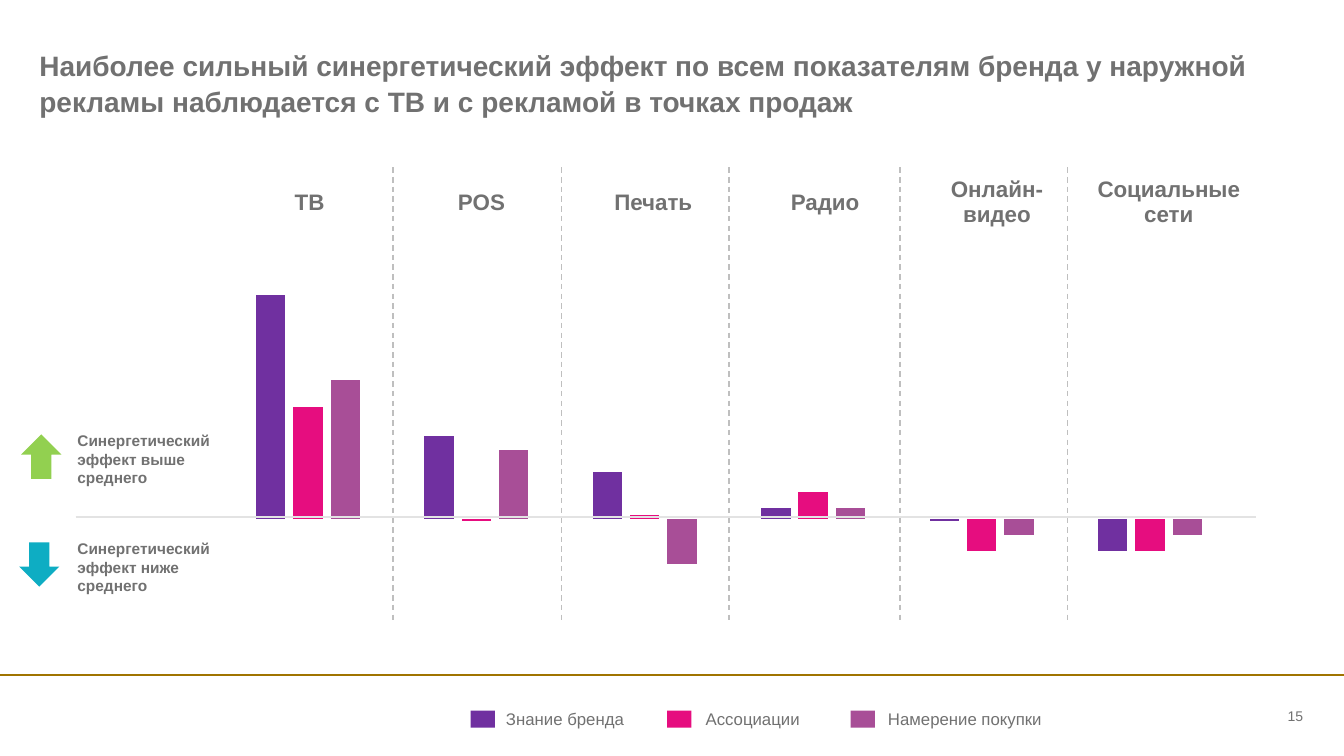
import pptx
import pptx.chart.data
import pptx.dml.color
import pptx.enum.chart
import pptx.enum.dml
import pptx.enum.shapes
import pptx.enum.text
import pptx.oxml
import pptx.oxml.ns
import pptx.util

Pt = pptx.util.Pt
SHAPE = pptx.enum.shapes.MSO_SHAPE
ALIGN = pptx.enum.text.PP_ALIGN
ANCHOR = pptx.enum.text.MSO_ANCHOR

FONT = "Arial"
GREY = "717171"
NO_GRID_STYLE = "{2D5ABB26-0587-4C30-8999-92F81FD0307C}"
TITLE = ("Наиболее сильный синергетический эффект по всем показателям бренда "
         "у наружной рекламы наблюдается с ТВ и с рекламой в точках продаж")
MEDIA = ["ТВ", "POS", "Печать", "Радио", "Онлайн-\nвидео", "Социальные сети"]
DIVIDERS = [280.8, 401, 520.6, 643, 762.5]
SERIES = [
    ("Знание бренда", "7030A0", [100, 37, 21, 5, -1, -14], 336.2, 361.4),
    ("Ассоциации", "E60D7F", [50, -1, 2, 12, -14, -14], 476.6, 504),
    ("Намерение покупки", "A84E97", [62, 31, -20, 5, -7, -7], 607.7, 634.3),
]


def color(value):
    return pptx.dml.color.RGBColor.from_string(value)


def set_text(tf, text, size=12, bold=False, align=ALIGN.LEFT, spacing=None):
    tf.word_wrap = True
    for i, line in enumerate(text.split("\n")):
        p = tf.add_paragraph() if i else tf.paragraphs[0]
        p.alignment = align
        p.space_before = Pt(0)
        p.line_spacing = spacing
        r = p.add_run()
        r.text = line
        r.font.name = FONT
        r.font.size = Pt(size)
        r.font.bold = bold
        r.font.color.rgb = color(GREY)


def set_insets(box, x=0, y=0):
    box.margin_left = box.margin_right = Pt(x)
    box.margin_top = box.margin_bottom = Pt(y)


def add_title(s):
    sp = s.shapes.title
    sp.left, sp.top, sp.width, sp.height = Pt(28.1), Pt(33.8), Pt(902.9), Pt(31.7)
    tf = sp.text_frame
    tf.auto_size = pptx.enum.text.MSO_AUTO_SIZE.NONE
    tf.vertical_anchor = ANCHOR.TOP
    set_insets(tf)
    set_text(tf, TITLE, size=20, bold=True, spacing=1.05)


def add_text(s, text, x, y, w, h, inset=(0, 0), anchor=ANCHOR.MIDDLE, **fmt):
    tf = s.shapes.add_textbox(Pt(x), Pt(y), Pt(w), Pt(h)).text_frame
    tf.vertical_anchor = anchor
    set_insets(tf, *inset)
    set_text(tf, text, **fmt)


def add_line(s, x1, y1, x2, y2, line_color, width=1, dashed=False):
    cxn = s.shapes.add_connector(pptx.enum.shapes.MSO_CONNECTOR.STRAIGHT,
                                 Pt(x1), Pt(y1), Pt(x2), Pt(y2))
    cxn.line.color.rgb = color(line_color)
    cxn.line.width = Pt(width)
    if dashed:
        cxn.line.dash_style = pptx.enum.dml.MSO_LINE.DASH
    cxn._element.spPr.append(pptx.oxml.parse_xml(
        f'<a:effectLst {pptx.oxml.ns.nsdecls("a")}/>'))


def add_block(s, kind, x, y, w, h, fill):
    sp = s.shapes.add_shape(kind, Pt(x), Pt(y), Pt(w), Pt(h))
    sp.shadow.inherit = False
    sp.fill.solid()
    sp.fill.fore_color.rgb = color(fill)
    sp.line.fill.background()


def add_effect_chart(s):
    data = pptx.chart.data.CategoryChartData()
    data.categories = [m.replace("\n", "") for m in MEDIA]
    for name, _, values, _, _ in SERIES:
        data.add_series(name, values)
    chart = s.shapes.add_chart(
        pptx.enum.chart.XL_CHART_TYPE.COLUMN_CLUSTERED,
        Pt(159.8), Pt(107.3), Pt(736.6), Pt(352.1), data).chart
    chart.has_legend = False
    chart.has_title = False
    chart.font.name = FONT
    chart.font.size = Pt(10)
    chart.font.color.rgb = color(GREY)
    chart.category_axis.visible = False
    axis = chart.value_axis
    axis.visible = False
    axis.has_major_gridlines = False
    axis.minimum_scale, axis.maximum_scale = -26, 131
    plot = chart.plots[0]
    plot.vary_by_categories = False
    plot.gap_width = 219
    plot.overlap = -27
    for series, (_, fill, _, _, _) in zip(plot.series, SERIES):
        series.invert_if_negative = False
        series.format.fill.solid()
        series.format.fill.fore_color.rgb = color(fill)
    set_plot_area(chart, x=0, y=0.153, w=0.98, h=0.714)


def set_plot_area(chart, **box):
    sizes = "".join(f'<c:{k} val="{v}"/>' for k, v in box.items())
    area = chart._chartSpace.chart.plotArea
    for old in area.findall(pptx.oxml.ns.qn("c:layout")):
        area.remove(old)
    area.insert(0, pptx.oxml.parse_xml(
        f'<c:layout {pptx.oxml.ns.nsdecls("c")}><c:manualLayout>'
        '<c:layoutTarget val="inner"/><c:xMode val="edge"/><c:yMode val="edge"/>'
        f'{sizes}</c:manualLayout></c:layout>'))


def add_media_table(s):
    frame = s.shapes.add_table(1, len(MEDIA), Pt(159.8), Pt(119.5), Pt(736.6), Pt(50.4))
    table = frame.table
    table.first_row = table.horz_banding = False
    table._tbl.tblPr.find(pptx.oxml.ns.qn("a:tableStyleId")).text = NO_GRID_STYLE
    for cell, name in zip(table.rows[0].cells, MEDIA):
        set_insets(cell, 0.72, 0.36)
        cell.vertical_anchor = ANCHOR.MIDDLE
        cell.fill.background()
        set_text(cell.text_frame, name, size=16, bold=True, align=ALIGN.CENTER)
        tcPr = cell._tc.get_or_add_tcPr()
        for i, side in enumerate("LRTB"):
            tcPr.insert(i, pptx.oxml.parse_xml(
                f'<a:ln{side} {pptx.oxml.ns.nsdecls("a")} w="12700"><a:solidFill>'
                f'<a:srgbClr val="FFFFFF"/></a:solidFill></a:ln{side}>'))


def add_effect_note(s, word, kind, y, arrow_x, arrow_y, fill):
    add_text(s, f"Синергетический эффект {word} среднего", 48.2, y, 111.6, 48.2,
             inset=(7.2, 3.6), anchor=ANCHOR.BOTTOM, size=11, bold=True)
    add_block(s, kind, arrow_x, arrow_y, 28.8, 31.7, fill)


def main():
    prs = pptx.Presentation()
    prs.slide_width, prs.slide_height = Pt(960), Pt(540)
    s = prs.slides.add_slide(prs.slide_layouts[5])
    add_line(s, 0, 482.4, 960, 482.4, "A07400", width=1.5)
    add_title(s)
    add_effect_chart(s)
    add_media_table(s)
    for x in DIVIDERS:
        add_line(s, x, 119.5, x, 443.5, "BFBFBF", dashed=True)
    add_line(s, 54, 369.4, 897.1, 369.4, "E3E3E3")
    add_effect_note(s, "выше", SHAPE.UP_ARROW, 303.1, 15.1, 310.3, "92D050")
    add_effect_note(s, "ниже", SHAPE.DOWN_ARROW, 380.2, 13.7, 387.4, "0EADC3")
    for name, fill, _, swatch_x, text_x in SERIES:
        add_block(s, SHAPE.RECTANGLE, swatch_x, 507.6, 17.3, 12.2, fill)
        add_text(s, name, text_x, 502.6, 150 if name == SERIES[-1][0] else 95, 22)
    add_text(s, "15", 854.6, 503.3, 76.3, 15.8, size=10, align=ALIGN.RIGHT)
    prs.save("out.pptx")


if __name__ == "__main__":
    main()
